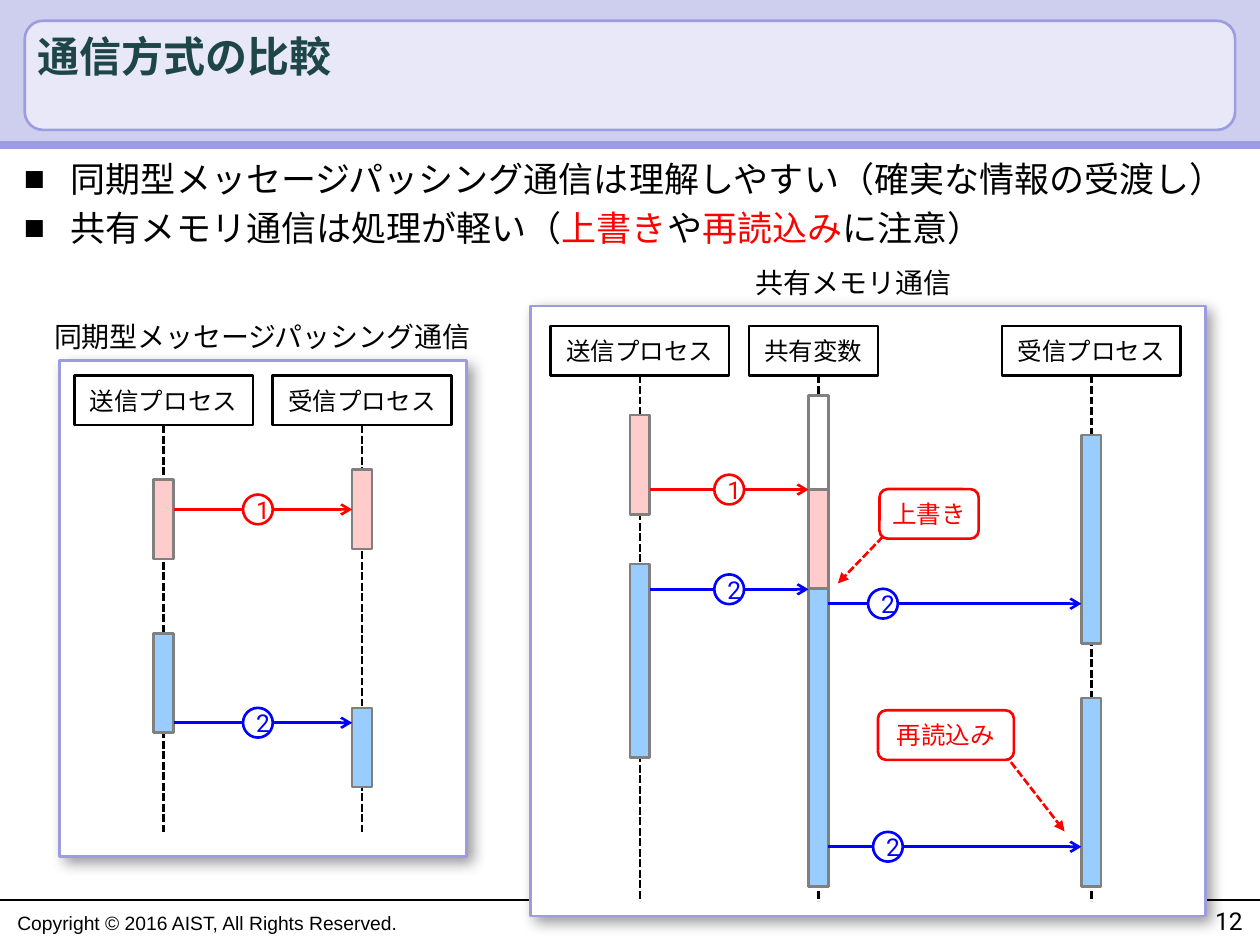
from lxml.etree import SubElement
from pptx import Presentation
from pptx.dml.color import RGBColor
from pptx.enum.dml import MSO_LINE
from pptx.enum.shapes import MSO_CONNECTOR, MSO_SHAPE
from pptx.enum.text import MSO_ANCHOR, PP_ALIGN
from pptx.oxml.ns import qn
from pptx.util import Cm, Pt

COLORS = {
    "black": "000000", "white": "FFFFFF", "red": "FF0000", "blue": "0000FF",
    "gray": "808080", "pink": "FFCCCC", "sky": "99CCFF", "title": "1E4649",
    "band": "CECEEF", "title_box": "E8E8F8", "lavender": "9C9CDF",
}
BAR_WIDTH = 0.4
BALL_SIZE = 0.6
HEADER_HEIGHT = 1.0


def color(name):
    """Return the named colour."""
    return RGBColor.from_string(COLORS[name])


def format_run(run, size, color_name="black", font="Roboto", bold=False):
    """Set the character format of a run."""
    run.font.name = font
    run.font.size = Pt(size)
    run.font.bold = bold
    run.font.color.rgb = color(color_name)


def add_box(slide, kind, left, top, width, height, fill, line=None):
    """Add a preset shape without a shadow."""
    shape = slide.shapes.add_shape(kind, Cm(left), Cm(top), Cm(width), Cm(height))
    shape.shadow.inherit = False
    shape.fill.solid()
    shape.fill.fore_color.rgb = color(fill)
    if line:
        shape.line.color.rgb = color(line)
        shape.line.width = Pt(1.5)
    else:
        shape.line.fill.background()
    return shape


def add_line(slide, start, end, color_name="black", width=1.5, dashed=False, head=None):
    """Add a straight line, with an arrowhead at its end if asked."""
    points = [Cm(value) for value in (*start, *end)]
    connector = slide.shapes.add_connector(MSO_CONNECTOR.STRAIGHT, *points)
    connector.line.color.rgb = color(color_name)
    connector.line.width = Pt(width)
    if dashed:
        connector.line.dash_style = MSO_LINE.SQUARE_DOT
    if head:
        SubElement(connector.line._get_or_add_ln(), qn("a:tailEnd"), type=head)
    SubElement(connector._element.spPr, qn("a:effectLst"))


def add_text(slide, left, top, width, height, text, size, color_name="black",
             font="Roboto", bold=False, wrap=False, align=PP_ALIGN.LEFT,
             anchor=MSO_ANCHOR.TOP):
    """Add a text box with one paragraph."""
    box = slide.shapes.add_textbox(Cm(left), Cm(top), Cm(width), Cm(height))
    box.text_frame.word_wrap = wrap
    box.text_frame.vertical_anchor = anchor
    paragraph = box.text_frame.paragraphs[0]
    paragraph.text = text
    paragraph.alignment = align
    format_run(paragraph.runs[0], size, color_name, font, bold)


def add_bullets(slide, items):
    """Add the bulleted list; each item is a list of text and colour pairs."""
    box = slide.shapes.add_textbox(Cm(0.23), Cm(3.05), Cm(24.87), Cm(2.26))
    text_frame = box.text_frame
    text_frame.word_wrap = True
    for index, parts in enumerate(items):
        paragraph = text_frame.add_paragraph() if index else text_frame.paragraphs[0]
        properties = paragraph._p.get_or_add_pPr()
        properties.set("marL", str(Cm(0.95)))
        properties.set("indent", str(-Cm(0.95)))
        SubElement(properties, qn("a:buFont"), typeface="Arial")
        SubElement(properties, qn("a:buChar"), char="■")
        paragraph.space_before = Pt(4 if index else 0)
        for text, color_name in parts:
            run = paragraph.add_run()
            run.text = text
            format_run(run, 20, color_name)


def add_panel(slide, left, top, width, height):
    """Add the white panel of a diagram with its soft shadow."""
    shape = add_box(slide, MSO_SHAPE.RECTANGLE, left, top, width, height, "white", "lavender")
    effects = shape._element.spPr.find(qn("a:effectLst"))
    shadow = SubElement(effects, qn("a:outerShdw"), blurRad=str(Pt(8)), dist=str(Pt(4)),
                        dir="2700000", algn="tl", rotWithShape="0")
    shade = SubElement(shadow, qn("a:srgbClr"), val=COLORS["black"])
    SubElement(shade, qn("a:alpha"), val="40000")


def add_labelled(slide, kind, left, top, width, height, text, color_name, wrap=False):
    """Add a white shape with centred text in the colour of its outline."""
    shape = add_box(slide, kind, left, top, width, height, "white", color_name)
    shape.text_frame.text = text
    shape.text_frame.word_wrap = wrap
    shape.text_frame.vertical_anchor = MSO_ANCHOR.MIDDLE
    paragraph = shape.text_frame.paragraphs[0]
    paragraph.alignment = PP_ALIGN.CENTER
    format_run(paragraph.runs[0], 14, color_name)
    return shape


def add_lifeline(slide, center, header_top, bottom, name, bars, width=3.6, shift=0):
    """Add a header, its dashed lifeline and the bars on it."""
    header_bottom = header_top + HEADER_HEIGHT
    add_line(slide, (center, header_bottom), (center, bottom), dashed=True)
    header = add_labelled(slide, MSO_SHAPE.ROUNDED_RECTANGLE, center + shift - width / 2,
                          header_top, width, HEADER_HEIGHT, name, "black")
    header.adjustments[0] = 0
    for top, height, fill in bars:
        add_box(slide, MSO_SHAPE.RECTANGLE, center - BAR_WIDTH / 2, top,
                BAR_WIDTH, height, fill, "gray")


def add_message(slide, sender, receiver, y, ball, number, color_name):
    """Add an arrow between two lifelines with a numbered ball on it."""
    add_line(slide, (sender + BAR_WIDTH / 2, y), (receiver - BAR_WIDTH / 2, y),
             color_name, head="arrow")
    add_labelled(slide, MSO_SHAPE.OVAL, ball - BALL_SIZE / 2, y - BALL_SIZE / 2,
                 BALL_SIZE, BALL_SIZE, number, color_name, wrap=True)


def add_callout(slide, left, top, width, text, start, end):
    """Add a red note and the dashed arrow that leads from it."""
    add_line(slide, start, end, "red", dashed=True, head="triangle")
    add_labelled(slide, MSO_SHAPE.ROUNDED_RECTANGLE, left, top, width, 1, text, "red")


def add_frame(slide):
    """Add the title band, the title and the footer."""
    add_line(slide, (0, 18.14), (25.4, 18.14), width=0.75)
    add_text(slide, 0.1, 18.24, 8.53, 0.74,
             "Copyright © 2016 AIST, All Rights Reserved.", 11, font="Arial")
    add_box(slide, MSO_SHAPE.RECTANGLE, 0, 0, 25.4, 2.92, "band")
    add_box(slide, MSO_SHAPE.ROUNDED_RECTANGLE, 0.5, 0.42, 24.4, 2.2, "title_box", "lavender")
    add_line(slide, (0, 2.92), (25.4, 2.92), "lavender", 4.5)
    add_text(slide, 0.5, 0.53, 24.4, 1.2, "通信方式の比較", 24, "title",
             bold=True, wrap=True, anchor=MSO_ANCHOR.MIDDLE)
    add_text(slide, 19.38, 18.14, 5.92, 0.79, "12", 14, wrap=True, align=PP_ALIGN.RIGHT)


def add_message_passing(slide):
    """Add the diagram of synchronous message passing."""
    sender, receiver = 3.3, 7.3
    add_panel(slide, 1.2, 7.27, 8.2, 10)
    add_lifeline(slide, sender, 7.57, 16.77, "送信プロセス",
                 [(9.67, 1.6, "pink"), (12.77, 2, "sky")])
    add_lifeline(slide, receiver, 7.57, 16.77, "受信プロセス",
                 [(9.47, 1.6, "pink"), (14.27, 1.6, "sky")])
    add_message(slide, sender, receiver, 10.27, 5.2, "1", "red")
    add_message(slide, sender, receiver, 14.57, 5.2, "2", "blue")
    add_text(slide, 0.84, 6.32, 9.07, 0.94, "同期型メッセージパッシング通信", 16)


def add_shared_memory(slide):
    """Add the diagram of shared memory communication."""
    sender, variable, receiver = 12.9, 16.5, 22
    add_panel(slide, 10.7, 6.17, 13.6, 12.3)
    add_lifeline(slide, sender, 6.57, 18.17, "送信プロセス",
                 [(8.37, 2, "pink"), (11.37, 3.9, "sky")])
    add_lifeline(slide, variable, 6.57, 18.17, "共有変数",
                 [(7.97, 9.9, "white"), (9.87, 2, "pink"), (11.87, 6, "sky")],
                 width=2.6, shift=-0.1)
    add_lifeline(slide, receiver, 6.57, 18.17, "受信プロセス",
                 [(8.77, 4.2, "sky"), (14.07, 3.8, "sky")])
    add_message(slide, sender, variable, 9.87, 14.7, "1", "red")
    add_message(slide, sender, variable, 11.88, 14.7, "2", "blue")
    add_message(slide, variable, receiver, 12.17, 17.8, "2", "blue")
    add_message(slide, variable, receiver, 17.07, 17.9, "2", "blue")
    add_callout(slide, 17.7, 14.32, 2.74, "再読込み", (19.99, 14.86), (21.46, 16.76))
    add_callout(slide, 17.73, 9.86, 2, "上書き", (18.24, 10.36), (16.89, 11.76))
    add_text(slide, 14.99, 5.23, 4.5, 0.94, "共有メモリ通信", 16)


def main():
    """Build the slide and save it."""
    presentation = Presentation()
    presentation.slide_width = Cm(25.4)
    presentation.slide_height = Cm(19.05)
    slide = presentation.slides.add_slide(presentation.slide_layouts[6])
    add_frame(slide)
    add_bullets(slide, [
        [("同期型メッセージパッシング通信は理解しやすい（確実な情報の受渡し）", "black")],
        [("共有メモリ通信は処理が軽い（", "black"), ("上書き", "red"), ("や", "black"),
         ("再読込み", "red"), ("に注意）", "black")],
    ])
    add_message_passing(slide)
    add_shared_memory(slide)
    presentation.save("out.pptx")


if __name__ == "__main__":
    main()
